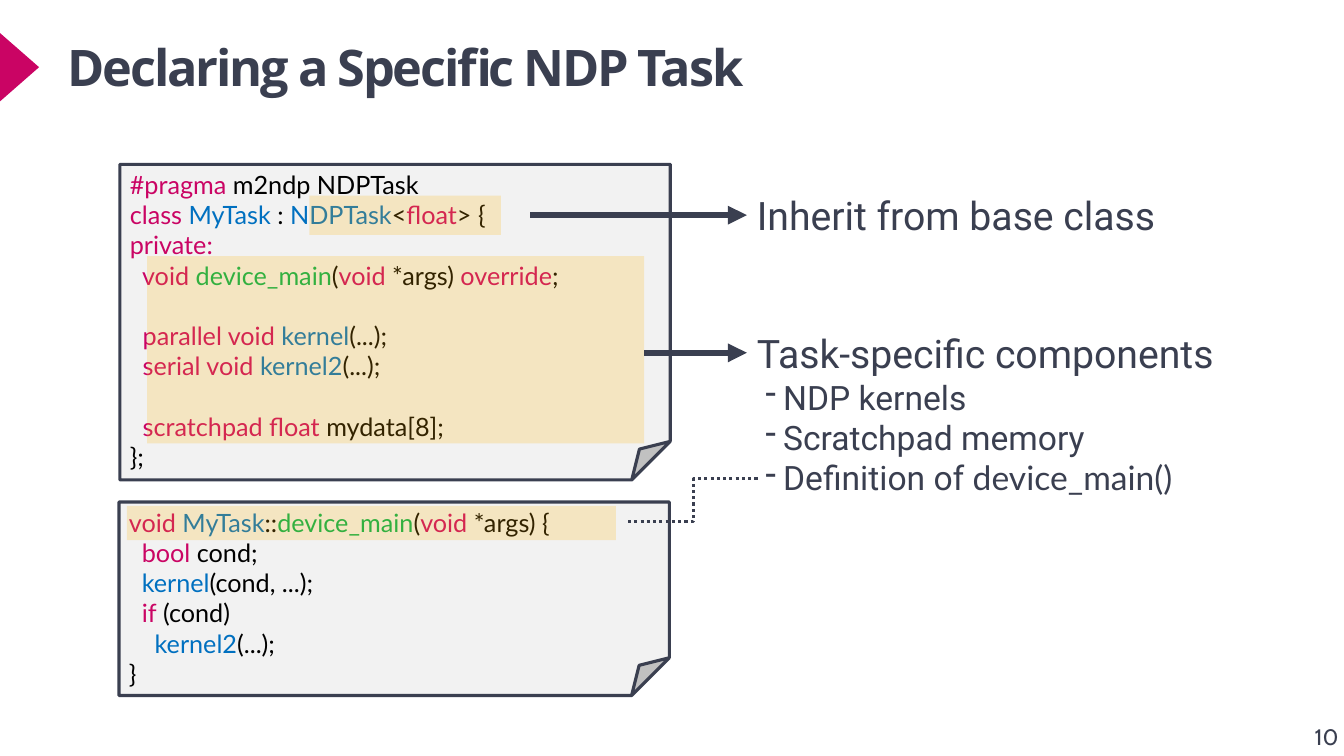
from typing import NamedTuple

from lxml import etree
from pptx import Presentation
from pptx.dml.color import RGBColor
from pptx.enum.dml import MSO_LINE
from pptx.enum.shapes import MSO_CONNECTOR, MSO_SHAPE
from pptx.enum.text import MSO_ANCHOR, PP_ALIGN
from pptx.oxml.ns import qn
from pptx.util import Pt

STRAIGHT, ELBOW = MSO_CONNECTOR.STRAIGHT, MSO_CONNECTOR.ELBOW
RECTANGLE, TRIANGLE = MSO_SHAPE.RECTANGLE, MSO_SHAPE.ISOSCELES_TRIANGLE
FOLDED = MSO_SHAPE.FOLDED_CORNER
DOTTED = MSO_LINE.ROUND_DOT
TOP, BOTTOM = MSO_ANCHOR.TOP, MSO_ANCHOR.BOTTOM
LEFT, RIGHT = PP_ALIGN.LEFT, PP_ALIGN.RIGHT

INK = RGBColor(0x3A, 0x3F, 0x50)
MAGENTA = RGBColor(0xCA, 0x04, 0x64)
BLUE = RGBColor(0x00, 0x70, 0xC0)
GREEN = RGBColor(0x00, 0xB0, 0x50)
BLACK = RGBColor(0, 0, 0)
PAPER = RGBColor(0xF2, 0xF2, 0xF2)
AMBER = RGBColor(0xFF, 0xB3, 0x00)

CODE_LINE = 21.6
NOTE_LEFT = 533.5


class Area(NamedTuple):
    left: float
    top: float
    width: float
    height: float


class Span(NamedTuple):
    text: str
    color: RGBColor = BLACK
    font: str = "Lato"
    size: float = 18
    bold: bool = False
    spacing: float = 0


class Line(NamedTuple):
    spans: list
    before: float = 0
    dashed: bool = False


class CodeCard(NamedTuple):
    area: Area
    fold: float
    lines: list


TASK_CLASS = CodeCard(Area(85.7, 117.4, 393.1, 225.4), 0.122, [
    Line([Span("#pragma ", MAGENTA), Span("m2ndp NDPTask")]),
    Line([Span("class ", MAGENTA), Span("MyTask", BLUE), Span(" : "),
          Span("NDPTask", BLUE), Span("<"), Span("float", MAGENTA), Span("> {")]),
    Line([Span("private:", MAGENTA)]),
    Line([Span("  void ", MAGENTA), Span("device_main", GREEN), Span("("),
          Span("void", MAGENTA), Span(" *args) "), Span("override", MAGENTA), Span(";")]),
    Line([Span("  parallel void ", MAGENTA), Span("kernel", BLUE), Span("(...);")], CODE_LINE),
    Line([Span("  serial void ", MAGENTA), Span("kernel2", BLUE), Span("(...);")]),
    Line([Span("  scratchpad float", MAGENTA), Span(" mydata[8];")], CODE_LINE),
    Line([Span("};")]),
])

DEVICE_MAIN = CodeCard(Area(85, 358.6, 393.1, 138.2), 0.195, [
    Line([Span("void ", MAGENTA), Span("MyTask", BLUE), Span("::"),
          Span("device_main", GREEN), Span("("), Span("void", MAGENTA), Span(" *args) {")]),
    Line([Span("  bool", MAGENTA), Span(" cond;")]),
    Line([Span("  kernel", BLUE), Span("(cond, ...);")]),
    Line([Span("  if", MAGENTA), Span(" (cond)")]),
    Line([Span("    kernel2", BLUE), Span("(...);")]),
    Line([Span("}")]),
])


def heading(text: str) -> Span:
    return Span(text, INK, "Roboto", 28)


def detail(text: str, font: str = "Roboto") -> Span:
    return Span(text, INK, font, 24)


def add_dash(para) -> None:
    properties = para._p.get_or_add_pPr()
    properties.set("marL", str(Pt(18.8)))
    properties.set("indent", str(-Pt(12.9)))
    etree.SubElement(properties, qn("a:buChar")).set("char", "-")


def add_text(shapes, area: Area, lines: list, *, inset: bool = True,
             anchor=TOP, align=LEFT):
    box = shapes.add_textbox(*map(Pt, area))
    frame = box.text_frame
    frame.word_wrap = True
    frame.vertical_anchor = anchor
    if not inset:
        frame.margin_left = frame.margin_right = frame.margin_top = frame.margin_bottom = 0
    for index, line in enumerate(lines):
        para = frame.add_paragraph() if index else frame.paragraphs[0]
        para.alignment = align
        if line.before:
            para.space_before = Pt(line.before)
        if line.dashed:
            add_dash(para)
        for span in line.spans:
            run = para.add_run()
            run.text = span.text
            run.font.name = span.font
            run.font.size = Pt(span.size)
            run.font.bold = span.bold
            run.font.color.rgb = span.color
            if span.spacing:
                run._r.get_or_add_rPr().set("spc", str(round(span.spacing * 100)))
    return box


def add_block(shapes, kind, area: Area, color: RGBColor):
    block = shapes.add_shape(kind, *map(Pt, area))
    block.shadow.inherit = False
    block.fill.solid()
    block.fill.fore_color.rgb = color
    block.line.fill.background()
    return block


def add_highlight(shapes, area: Area) -> None:
    block = add_block(shapes, RECTANGLE, area, AMBER)
    color = block._element.spPr.find(qn("a:solidFill")).find(qn("a:srgbClr"))
    etree.SubElement(color, qn("a:alpha")).set("val", "20000")


def add_code_card(shapes, card: CodeCard) -> None:
    group = shapes.add_group_shape()
    sheet = add_block(group.shapes, FOLDED, card.area, PAPER)
    geometry = sheet._element.spPr.find(qn("a:prstGeom"))
    guide = etree.SubElement(geometry.get_or_add_avLst(), qn("a:gd"))
    guide.set("name", "adj")
    guide.set("fmla", f"val {round(card.fold * 100000)}")
    sheet.line.color.rgb = INK
    sheet.line.width = Pt(2.25)
    add_text(group.shapes, card.area, card.lines)


def add_link(shapes, kind, start: tuple, end: tuple, width: float, arrow: bool):
    link = shapes.add_connector(kind, *map(Pt, start + end))
    link.line.color.rgb = INK
    link.line.width = Pt(width)
    if arrow:
        outline = link._element.spPr.find(qn("a:ln"))
        etree.SubElement(outline, qn("a:tailEnd")).set("type", "triangle")
    else:
        link.line.dash_style = DOTTED
    etree.SubElement(link._element.spPr, qn("a:effectLst"))
    return link


def main() -> None:
    deck = Presentation()
    deck.slide_width, deck.slide_height = Pt(960), Pt(540)
    shapes = deck.slides.add_slide(deck.slide_layouts[6]).shapes
    marker = add_block(shapes, TRIANGLE, Area(-10.6, 34, 49, 28), MAGENTA)
    marker.rotation = 90
    title = Span("Declaring a Specific NDP Task", INK, "Open Sans", 36, True, -1.5)
    add_text(shapes, Area(48.2, 26, 881.3, 62), [Line([title])], inset=False)
    add_text(shapes, Area(907.9, 486.7, 48.2, 49), [Line([Span("10", INK, "Cabin", 16)])],
             inset=False, anchor=BOTTOM, align=RIGHT)
    add_code_card(shapes, TASK_CLASS)
    add_highlight(shapes, Area(105.1, 182.9, 355, 133.9))
    add_link(shapes, STRAIGHT, (460.1, 252), (NOTE_LEFT, 252), 4.5, True)
    add_text(shapes, Area(NOTE_LEFT, 231.8, 353.5, 128.2), [
        Line([heading("Task-specific components")]),
        Line([detail("NDP kernels")], dashed=True),
        Line([detail("Scratchpad memory")], dashed=True),
        Line([detail("Definition of "), detail("device_main()", "Lato")], dashed=True),
    ])
    add_highlight(shapes, Area(221, 139.7, 136.8, 28.1))
    base_note = add_text(shapes, Area(NOTE_LEFT, 133.2, 306.7, 41),
                         [Line([heading("Inherit from base class")])])
    base_link = add_link(shapes, STRAIGHT, (378.7, 153.7), (NOTE_LEFT, 153.7), 4.5, True)
    base_link.end_connect(base_note, 1)
    add_code_card(shapes, DEVICE_MAIN)
    add_link(shapes, ELBOW, (448.6, 372.6), (542.2, 342), 2.25, False)
    add_highlight(shapes, Area(90.7, 361.4, 349.2, 24.5))
    deck.save("out.pptx")


if __name__ == "__main__":
    main()
